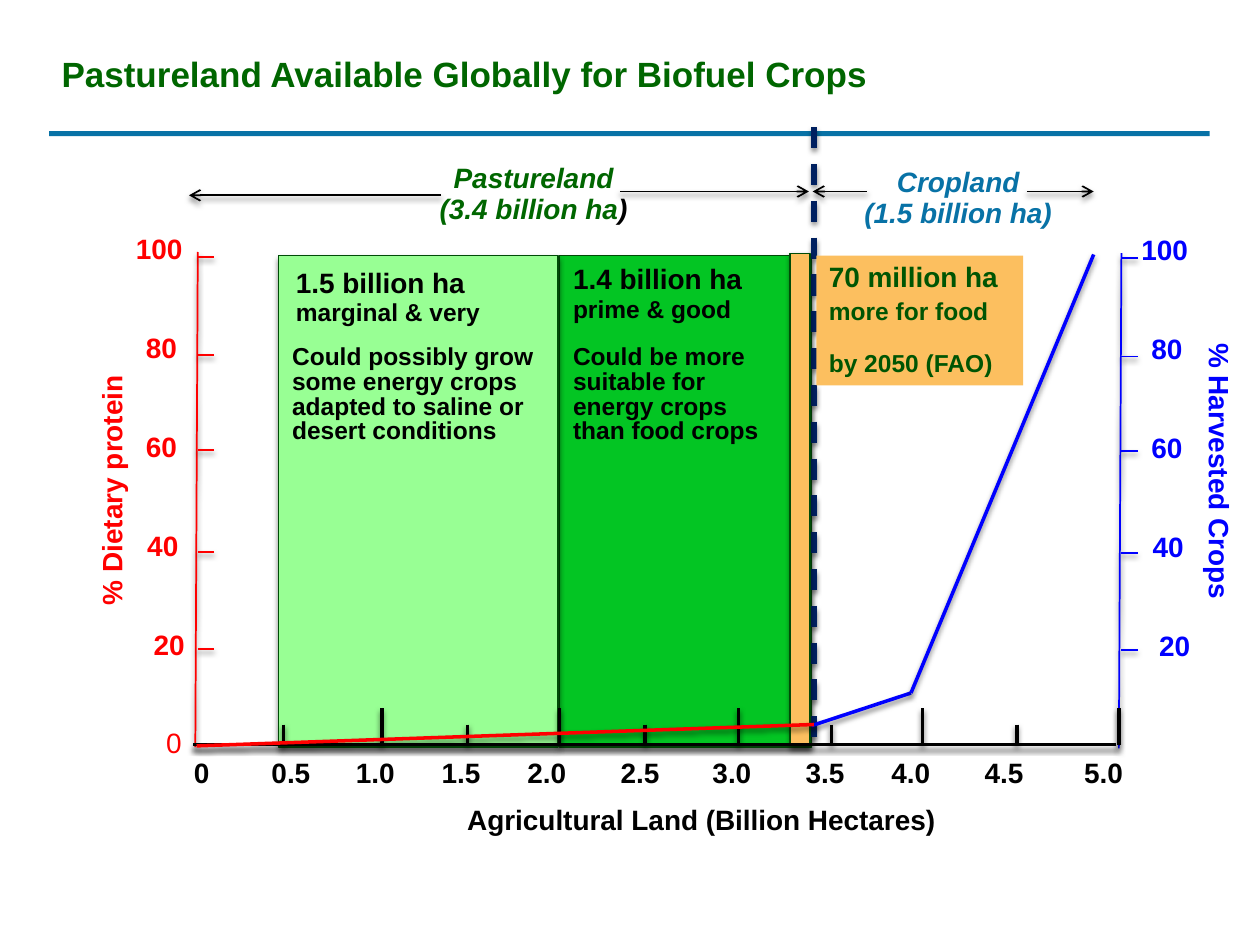
import typing

import pptx
import pptx.dml.color
import pptx.enum.dml
import pptx.enum.shapes
import pptx.enum.text
import pptx.oxml
import pptx.oxml.ns
import pptx.util
from pptx.util import Inches, Pt

BLACK, RED, BLUE = "000000", "FF0000", "0000FF"
TEAL, NAVY, PEACH = "0872A6", "002060", "FCBF5F"
TITLE_GREEN, EDGE_GREEN, FOOD_GREEN = "006600", "004B07", "005503"
LIGHT_BAND, DARK_BAND = "98FF94", "03C523"
LEFT = pptx.enum.text.PP_ALIGN.LEFT
CENTER = pptx.enum.text.PP_ALIGN.CENTER


class Box(typing.NamedTuple):
    """Left, top, width and height in inches."""
    left: float
    top: float
    width: float
    height: float

    def inset(self, dx, dy, width, height):
        return Box(self.left + dx, self.top + dy, width, height)


def rgb(color):
    return pptx.dml.color.RGBColor.from_string(color)


def add_shadow(shape):
    ns = pptx.oxml.ns.nsdecls("a")
    effects = pptx.oxml.parse_xml(
        f'<a:effectLst {ns}><a:outerShdw blurRad="{Pt(3)}" dist="{Pt(2)}" dir="5400000" '
        f'rotWithShape="0"><a:srgbClr val="{BLACK}"><a:alpha val="50000"/></a:srgbClr>'
        '</a:outerShdw></a:effectLst>')
    shape._element.spPr.append(effects)


def add_line(slide, start, end, color, width=1, dashed=False, arrow=False):
    line = slide.shapes.add_connector(
        pptx.enum.shapes.MSO_CONNECTOR.STRAIGHT, *(Inches(v) for v in (*start, *end)))
    line.line.color.rgb = rgb(color)
    line.line.width = Pt(width)
    if dashed:
        line.line.dash_style = pptx.enum.dml.MSO_LINE.DASH
    if arrow:
        line.line._get_or_add_ln().append(pptx.oxml.parse_xml(
            f'<a:tailEnd {pptx.oxml.ns.nsdecls("a")} type="arrow"/>'))
    add_shadow(line)


def add_rect(slide, box, fill, edge=None):
    rect = slide.shapes.add_shape(
        pptx.enum.shapes.MSO_SHAPE.RECTANGLE, *(Inches(v) for v in box))
    rect.fill.solid()
    rect.fill.fore_color.rgb = rgb(fill)
    if edge:
        rect.line.color.rgb = rgb(edge)
        rect.line.width = Pt(0.75)
        add_shadow(rect)
    else:
        rect.line.fill.background()
        rect.shadow.inherit = False
    return rect


def fill_text(frame, paragraphs, spacing=None, align=LEFT, italic=False, bold=True):
    """Each paragraph is a list of (text, size, color) runs."""
    for index, runs in enumerate(paragraphs):
        paragraph = frame.add_paragraph() if index else frame.paragraphs[0]
        paragraph.alignment = align
        if spacing:
            paragraph.line_spacing = Pt(spacing)
        for text, size, color in runs:
            run = paragraph.add_run()
            run.text = text
            run.font.name = "Arial"
            run.font.size = Pt(size)
            run.font.bold = bold
            run.font.italic = italic
            run.font.color.rgb = rgb(color)


def add_text(slide, box, paragraphs, wrap=False, rotation=0, **style):
    textbox = slide.shapes.add_textbox(*(Inches(v) for v in box))
    textbox.rotation = rotation
    textbox.text_frame.word_wrap = wrap
    textbox.text_frame.auto_size = pptx.enum.text.MSO_AUTO_SIZE.SHAPE_TO_FIT_TEXT
    fill_text(textbox.text_frame, paragraphs, **style)
    return textbox


def add_header(slide, box):
    add_rect(slide, box.inset(0, 0.67, box.width, 0.04), TEAL)
    add_text(slide, box.inset(0, 0, 6.64, 0.44),
             [[("Pastureland Available Globally for Biofuel Crops", 20, TITLE_GREEN)]])


def add_land_band(slide, box, fill, area, quality, use, heading_offset, use_width):
    add_rect(slide, box, fill, EDGE_GREEN)
    add_text(slide, box.inset(*heading_offset, 1.8, 0.55),
             [[(area, 16, BLACK)], [(quality, 14, BLACK)]], wrap=True, spacing=16)
    add_text(slide, box.inset(0.01, 0.67, use_width, 1.08), [[(use, 14, BLACK)]],
             wrap=True, spacing=14)


def add_food_band(slide, box):
    add_rect(slide, box.inset(0, 0, 0.16, box.height), PEACH, EDGE_GREEN)
    note = add_rect(slide, box.inset(0.21, 0.02, 1.64, 1.03), PEACH)
    frame = note.text_frame
    frame.word_wrap = True
    frame.vertical_anchor = pptx.enum.text.MSO_ANCHOR.TOP
    fill_text(frame, [[("70 million ha ", 16, FOOD_GREEN), ("more for food", 14, FOOD_GREEN)],
                      [("by 2050 (FAO)", 14, FOOD_GREEN)]], spacing=18)
    frame.paragraphs[1].space_before = Pt(12)


def add_land_spans(slide, box):
    """Names the two land types over arrows that meet at the divider."""
    divider = box.left + 4.96
    add_line(slide, (divider, 1.01), (divider, 5.94), NAVY, 3, dashed=True)
    add_text(slide, box.inset(1.88, 0, 1.71, 0.61),
             [[("Pastureland", 16, TITLE_GREEN)],
              [("(3.4 billion ha", 16, TITLE_GREEN), (")", 16, BLACK)]],
             spacing=18, align=CENTER, italic=True)
    add_text(slide, box.inset(5.25, 0.03, 1.71, 0.61),
             [[("Cropland", 16, TEAL)], [("(1.5 billion ha)", 16, TEAL)]],
             spacing=18, align=CENTER, italic=True)
    for start, end, drop in ((2, 0, 0.31), (3.42, 4.92, 0.28),
                             (5.38, 4.95, 0.28), (6.65, 7.18, 0.28)):
        y = box.top + drop
        add_line(slide, (box.left + start, y), (box.left + end, y), BLACK, arrow=True)


def add_percent_axis(slide, box, color, title, title_box, rotation, label_shift):
    add_line(slide, (box.left + 0.02, box.top), (box.left, box.top + box.height), color)
    label_lefts = (0.12, 0.07, 0.06, 0.06, -0.02)
    tick_drops = (3.15, 2.38, 1.57, 0.82, 0.04)
    for step, (label_left, drop) in enumerate(zip(label_lefts, tick_drops)):
        value = 20 * (step + 1)
        y = box.top + drop
        add_line(slide, (box.left + 0.02, y), (box.left + 0.15, y), color)
        add_text(slide, Box(1 + label_left + label_shift, box.top + 2.93 - 0.785 * step,
                            0.58 if value == 100 else 0.45, 0.37),
                 [[(str(value), 16, color)]])
    add_text(slide, title_box, [[(title, 16, color)]], rotation=rotation)


def add_land_axis(slide, box):
    base = box.top + box.height
    add_line(slide, (box.left + box.width, base), (box.left, base), BLACK, 2)
    for height, ticks in ((0.29, (3.03, 4.44, 5.86, 7.32, 8.88)),
                          (0.16, (2.25, 3.71, 5.12, 6.6, 8.07))):
        for x in ticks:
            add_line(slide, (x, base - height), (x, base), BLACK, 2)

    add_text(slide, box.inset(-0.31, box.height - 0.2, 0.33, 0.4),
             [[("0", 16, RED)]], bold=False)
    values = "\t".join(["0"] + [f"{step / 2:.1f}" for step in range(1, 11)])
    labels = add_text(slide, box.inset(-0.09, box.height + 0.04, 8.11, 0.37),
                      [[(values, 16, BLACK)]], wrap=True)
    centers = (0.77, 1.44, 2.12, 2.8, 3.54, 4.27, 5.01, 5.69, 6.43, 7.22)
    stops = "".join(f'<a:tab pos="{Inches(x)}" algn="ctr"/>' for x in centers)
    labels.text_frame.paragraphs[0]._p.get_or_add_pPr().append(pptx.oxml.parse_xml(
        f'<a:tabLst {pptx.oxml.ns.nsdecls("a")}>{stops}</a:tabLst>'))
    add_text(slide, box.inset(2.08, box.height + 0.41, 3.97, 0.37),
             [[("Agricultural Land (Billion Hectares)", 16, BLACK)]])


def add_curves(slide, box):
    """Dietary protein in red, harvested crops in blue."""
    for color, points in ((BLUE, ((4.91, 3.75), (5.7, 3.49), (7.15, 0.01))),
                          (RED, ((0.03, 3.91), (4.93, 3.74)))):
        places = [(box.left + x, box.top + y) for x, y in points]
        for start, end in zip(places, places[1:]):
            add_line(slide, start, end, color, 2)


def main():
    deck = pptx.Presentation()
    deck.slide_width, deck.slide_height = Inches(10), Inches(7.5)
    slide = deck.slides.add_slide(deck.slide_layouts[6])
    plot = Box(1.53, 2.01, 7.33, 3.9)

    add_header(slide, Box(0.39, 0.37, 9.21, 0.71))
    add_land_band(slide, plot.inset(2.91, 0.02, 2, 3.9), DARK_BAND, "1.4 billion ha",
                  "prime & good",
                  "Could be more suitable for energy crops than food crops",
                  (0.01, 0.04), 1.84)
    add_land_band(slide, plot.inset(0.68, 0.02, 2.22, 3.9), LIGHT_BAND, "1.5 billion ha",
                  "marginal & very",
                  "Could possibly grow some energy crops adapted to saline or desert conditions",
                  (0.04, 0.07), 2.14)
    add_land_spans(slide, Box(1.5, 1.24, 7.18, 0.64))
    add_percent_axis(slide, Box(1.55, 2, 0.15, 3.93), RED, "% Dietary protein",
                     Box(-0.14, 3.69, 2.05, 0.37), 270, 0)
    add_percent_axis(slide, Box(8.88, 2.01, 0.15, 3.93), BLUE, "% Harvested Crops",
                     Box(8.55, 3.57, 2.26, 0.37), 90, 7.98)
    add_food_band(slide, plot.inset(4.74, 0, 1.85, 3.91))
    add_land_axis(slide, plot)
    add_curves(slide, plot)
    deck.save("out.pptx")


if __name__ == "__main__":
    main()
